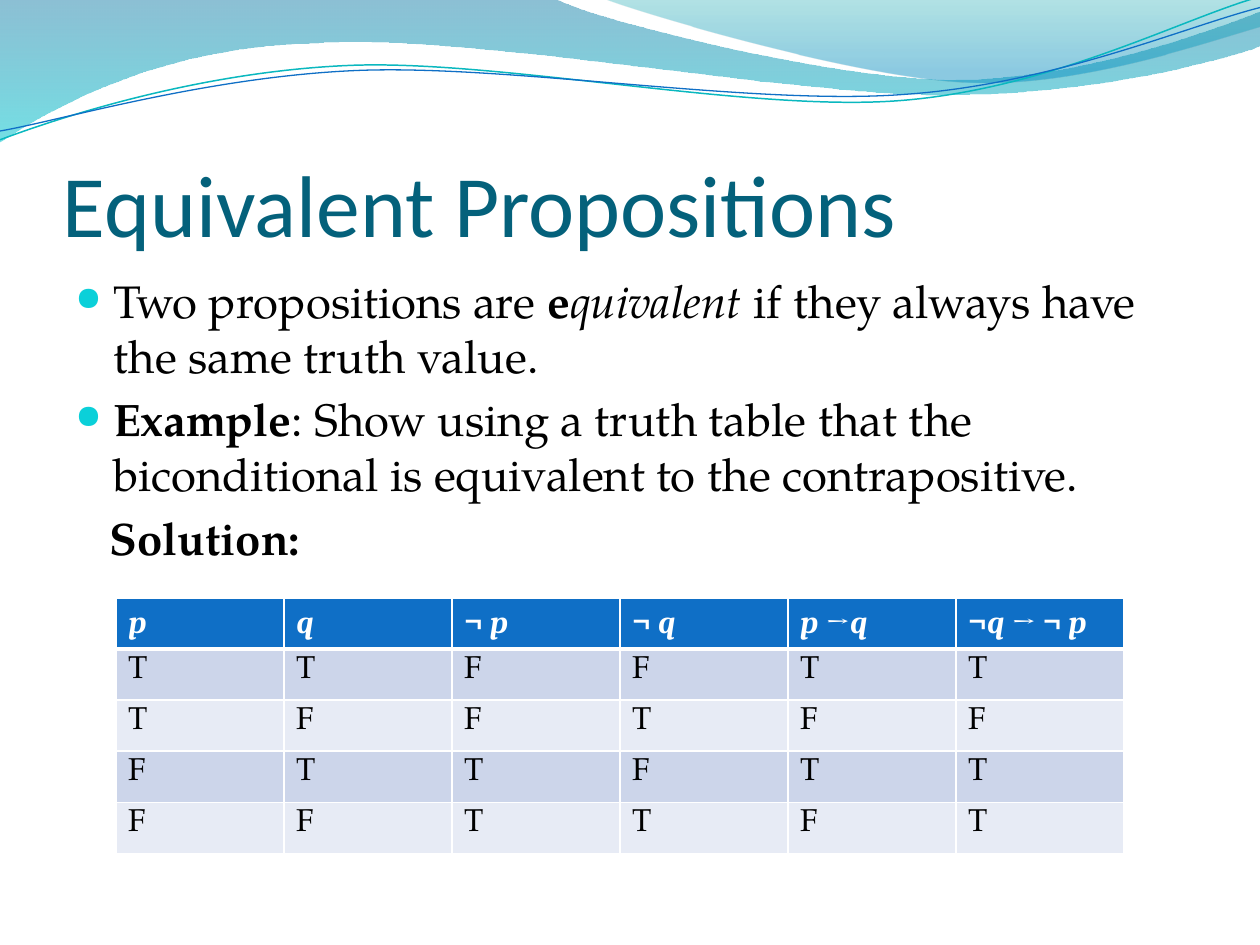
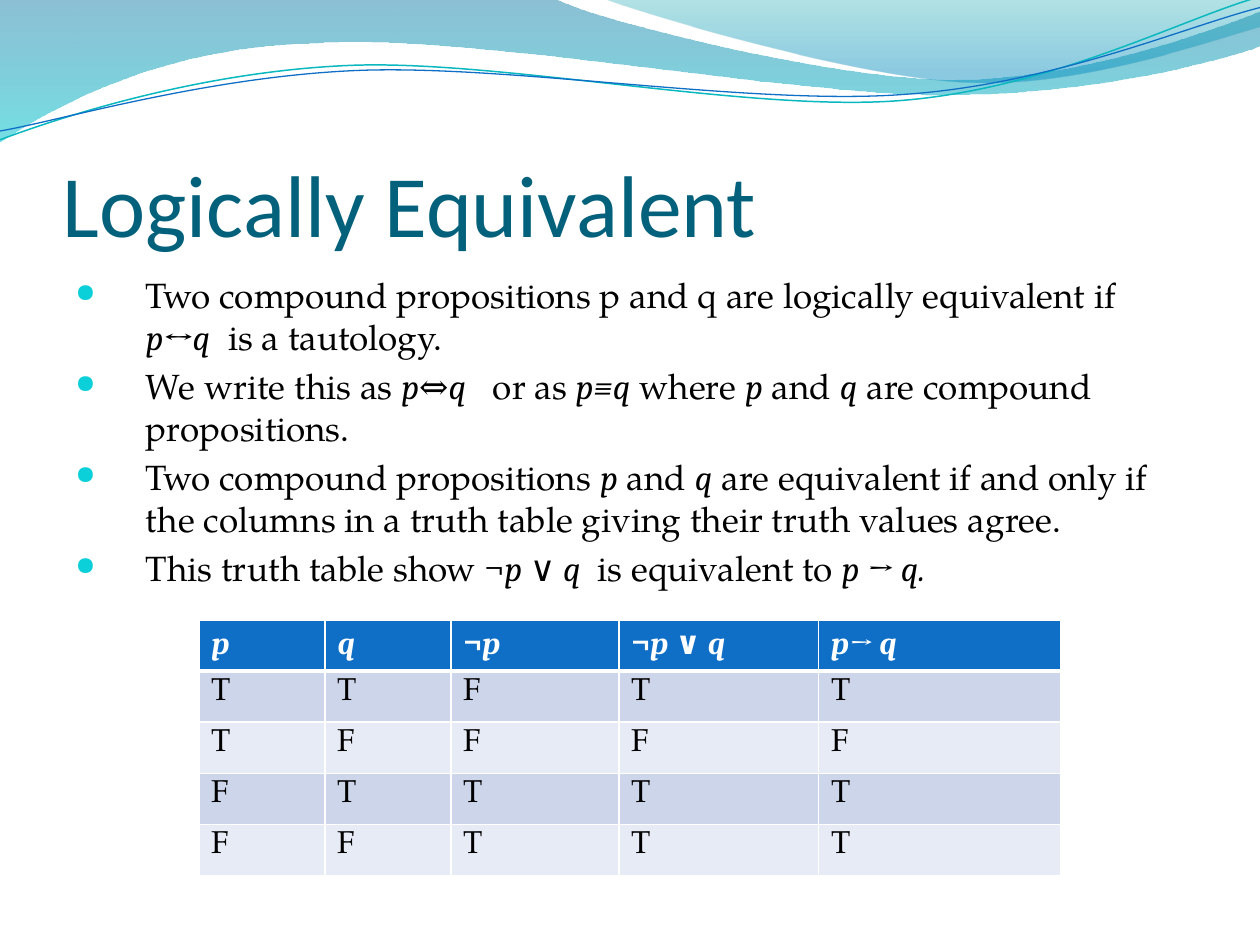
"""Build two slides on equivalent propositions under a shared wave band."""
from pptx import Presentation
from pptx import util as u
from pptx.dml.color import RGBColor
from pptx.enum import text
from pptx.oxml import parse_xml
from pptx.oxml.ns import nsdecls, qn

TITLE, BODY, MATH = "Calibri", "TeX Gyre Pagella", "Cambria"
TEAL, BULLET, BLUE, WHITE, BLACK = "04617B", "0BD0D9", "0F6FC6", "FFFFFF", "000000"
ROW_FILLS = ("CCD5EA", "E7EBF5")
ROW_HEIGHT = 2.03 / 5

WAVES = [
    dict(start=(0, 0), closed=True,
         stops=[(0, "0074A1", 45), (1, "00C6CF", 55)],
         segments=[[(4.4, -0.01)],
                   [(4.76, 0.17), (6.64, 0.63), (7.58, 0.63)],
                   [(8.53, 0.63), (9.58, 0.26), (10, 0.09)],
                   [(10.01, 0.36)],
                   [(9.83, 0.44), (8.7, 0.76), (7.46, 0.75)],
                   [(6.22, 0.75), (3.82, 0.28), (2.57, 0.34)],
                   [(1.29, 0.36), (0.46, 0.83), (-0.01, 1.13)]]),
    dict(start=(4.79, -0.01), closed=True,
         stops=[(0, "00A1A9", 30), (0.8, "008BBF", 45)],
         segments=[[(5.09, 0.11), (6.82, 0.62), (7.69, 0.65)],
                   [(8.56, 0.69), (9.61, 0.32), (10, 0.21)],
                   [(10, 0)]]),
    dict(start=(0, 1.11), closed=False, line=("0AB8BF", 0.85),
         segments=[[(0.48, 0.93), (1.58, 0.57), (2.77, 0.52)],
                   [(3.95, 0.47), (5.93, 0.89), (7.13, 0.8)],
                   [(8.33, 0.71), (9.38, 0.15), (9.98, -0.02)]]),
    dict(start=(0, 1.04), closed=False, line=(BLUE, 0.75),
         segments=[[(0.47, 0.96), (1.64, 0.61), (2.83, 0.56)],
                   [(4.03, 0.51), (5.97, 0.84), (7.17, 0.75)],
                   [(8.36, 0.67), (9.41, 0.21), (10, 0.06)]]),
]

# Run styles: b bold, i italic, m math font, each w widens by 5 points.
P, Q, NOT = ("p", "mi"), ("q", "mi"), ("¬", "m")
SLIDES = [
    dict(title="Equivalent Propositions", size=26, indent=0.3,
         bullets=[
             [("Two propositions are ", ""), ("e", "b"), ("quivalent ", "i"),
              ("if they always have the same truth value.", "")],
             [("Example", "b"),
              (": Show using a truth table that the biconditional is equivalent "
               "to the contrapositive.", "")]],
         closing=[("Solution:", "b")],
         table=dict(at=(0.92, 4.75), cols=[8 / 6] * 6, header_height=0.37,
                    header=[[P], [Q], [("¬ ", "m"), P], [("¬ ", "m"), Q],
                            [("p ", "mi"), ("→", "m"), Q],
                            [NOT, ("q ", "mi"), ("→ ¬ ", "m"), P]],
                    rows=["TTFFTT", "TFFTFF", "FTTFTT", "FFTTFT"])),
    dict(title="Logically Equivalent", size=20, indent=0.56,
         bullets=[
             [("Two compound propositions p and q are logically equivalent if ", ""),
              ("p↔q", "mi"), (" ", "w"), ("is a tautology.", "")],
             [("We write this as ", ""), ("p⇔q", "mi"), (" ", "ww"), ("or as ", ""),
              ("p≡q", "mi"), (" where ", ""), P, (" and ", ""), Q,
              (" are compound propositions.", "")],
             [("Two compound propositions ", ""), P, (" and ", ""), Q,
              (" are equivalent if and only if the columns in a truth table giving "
               "their truth values agree.", "")],
             [("This truth table show ", ""), NOT, ("p ", "mi"), ("∨ ", "m"),
              Q, (" ", "miw"), ("is equivalent to ", ""), ("p → q.", "mi")]],
         closing=None,
         table=dict(at=(1.58, 4.92), cols=[1, 1, 4 / 3, 19 / 12, 1.92],
                    header_height=ROW_HEIGHT,
                    header=[[P], [Q], [NOT, P],
                            [NOT, ("p ", "mi"), ("∨ ", "m"), Q], [("p→ q", "mi")]],
                    rows=["TTFTT", "TFFFF", "FTTTT", "FFTTT"])),
]


def rgb(color):
    """Turn a hex string into a colour."""
    return RGBColor.from_string(color)


def add_run(p, words, size, font, color, bold=False, italic=False):
    """Add one formatted run to a paragraph."""
    r = p.add_run()
    r.text = words
    f = r.font
    f.size, f.name, f.bold, f.italic = u.Pt(size), font, bold, italic
    f.color.rgb = rgb(color)
    return r


def add_runs(p, runs, size, color=BLACK, bold=False):
    """Add a list of styled runs to a paragraph."""
    for words, style in runs:
        r = add_run(p, words, size, MATH if "m" in style else BODY, color,
                    bold or "b" in style, "i" in style)
        if "w" in style:
            r._r.get_or_add_rPr().set("spc", str(500 * style.count("w")))


def bend(sp, segments):
    """Merge the three lines of each curved segment into one cubic curve."""
    lines = list(sp._element.iter(qn("a:lnTo")))
    for segment in segments:
        group, lines = lines[:len(segment)], lines[len(segment):]
        if len(group) == 3:
            curve = parse_xml(f'<a:cubicBezTo {nsdecls("a")}/>')
            group[0].addprevious(curve)
            for line in group:
                curve.append(line[0])
                line.getparent().remove(line)


def add_wave(s, start, segments, closed, stops=None, line=None):
    """Draw one wave as a gradient area or as a thin line."""
    points = [(u.Inches(x), u.Inches(y)) for x, y in [start] + sum(segments, [])]
    builder = s.shapes.build_freeform(*points[0])
    builder.add_line_segments(points[1:], close=closed)
    sp = builder.convert_to_shape()
    bend(sp, segments)
    sp.shadow.inherit = False
    if line:
        sp.fill.background()
        sp.line.color.rgb, sp.line.width = rgb(line[0]), u.Pt(line[1])
        return
    sp.line.fill.background()
    sp.fill.gradient()
    sp.fill.gradient_angle = 270
    for stop, (position, color, _) in zip(sp.fill.gradient_stops, stops):
        stop.position, stop.color.rgb = position, rgb(color)
    colors = sp._element.spPr.iter(qn("a:srgbClr"))
    for element, (_, _, opacity) in zip(colors, stops):
        element.append(parse_xml(f'<a:alpha {nsdecls("a")} val="{opacity * 1000}"/>'))


def add_box(s, left, top, width, height, insets, anchor):
    """Add a wrapping text box and return its text frame."""
    tf = s.shapes.add_textbox(*map(u.Inches, (left, top, width, height))).text_frame
    tf.word_wrap, tf.vertical_anchor = True, anchor
    tf.margin_left, tf.margin_top, tf.margin_right, tf.margin_bottom = map(u.Inches, insets)
    return tf


def set_indent(p, left, bullet):
    """Indent a paragraph, hanging behind a bullet if asked."""
    pPr = p._p.get_or_add_pPr()
    pPr.set("marL", str(u.Inches(left)))
    pPr.set("indent", str(u.Inches(-left if bullet else 0)))
    if bullet:
        for tag in (f'buClr {nsdecls("a")}><a:srgbClr val="{BULLET}"/></a:buClr',
                    f'buSzPct {nsdecls("a")} val="73000"/',
                    f'buChar {nsdecls("a")} char="●"/'):
            pPr.append(parse_xml(f"<a:{tag}>"))


def add_body(s, size, indent, bullets, closing):
    """Write the bullets and the optional closing line."""
    tf = add_box(s, 0.5, 2.12, 9, 4.8, (0.1, 0.05, 0.15, 0.05), text.MSO_ANCHOR.TOP)
    for i, runs in enumerate(bullets + ([closing] if closing else [])):
        p = tf.add_paragraph() if i else tf.paragraphs[0]
        bullet = i < len(bullets)
        set_indent(p, indent if bullet else 0.27, bullet)
        if i:
            p.space_before = u.Pt(0.2 * size)
        add_runs(p, runs, size)


def style_cell(cell, fill, top, bottom):
    """Give a cell white borders and a solid fill."""
    tcPr = cell._tc.get_or_add_tcPr()
    for side, width in (("L", 1), ("R", 1), ("T", top), ("B", bottom)):
        tcPr.append(parse_xml(
            f'<a:ln{side} {nsdecls("a")} w="{u.Pt(width)}"><a:solidFill>'
            f'<a:srgbClr val="{WHITE}"/></a:solidFill></a:ln{side}>'))
    cell.fill.solid()
    cell.fill.fore_color.rgb = rgb(fill)


def add_truth_table(s, at, cols, header_height, header, rows):
    """Add a truth table with a blue header and banded rows."""
    heights = [header_height] + [ROW_HEIGHT] * len(rows)
    table = s.shapes.add_table(len(heights), len(cols), *map(
        u.Inches, (*at, sum(cols), sum(heights)))).table
    for column, width in zip(table.columns, cols):
        column.width = u.Inches(width)
    grid = [header] + [[[(value, "")] for value in row] for row in rows]
    for i, (row, height) in enumerate(zip(grid, heights)):
        table.rows[i].height = u.Inches(height)
        for j, runs in enumerate(row):
            cell = table.cell(i, j)
            style_cell(cell, ROW_FILLS[(i - 1) % 2] if i else BLUE,
                       3 if i == 1 else 1, 1 if i else 3)
            add_runs(cell.text_frame.paragraphs[0], runs, 18,
                     BLACK if i else WHITE, bold=i == 0)


def add_slide(prs, title, table, **body):
    """Add one slide with waves, title, body and truth table."""
    s = prs.slides.add_slide(prs.slide_layouts[6])
    for wave in WAVES:
        add_wave(s, **wave)
    tf = add_box(s, 0.5, 0.77, 9, 1.25, (0, 0.05, 0, 0), text.MSO_ANCHOR.BOTTOM)
    add_run(tf.paragraphs[0], title, 50, TITLE, TEAL)
    add_body(s, **body)
    add_truth_table(s, **table)


def main():
    """Build and save the presentation."""
    prs = Presentation()
    prs.slide_width, prs.slide_height = u.Inches(10), u.Inches(7.5)
    for slide in SLIDES:
        add_slide(prs, **slide)
    prs.save("out.pptx")


if __name__ == "__main__":
    main()
